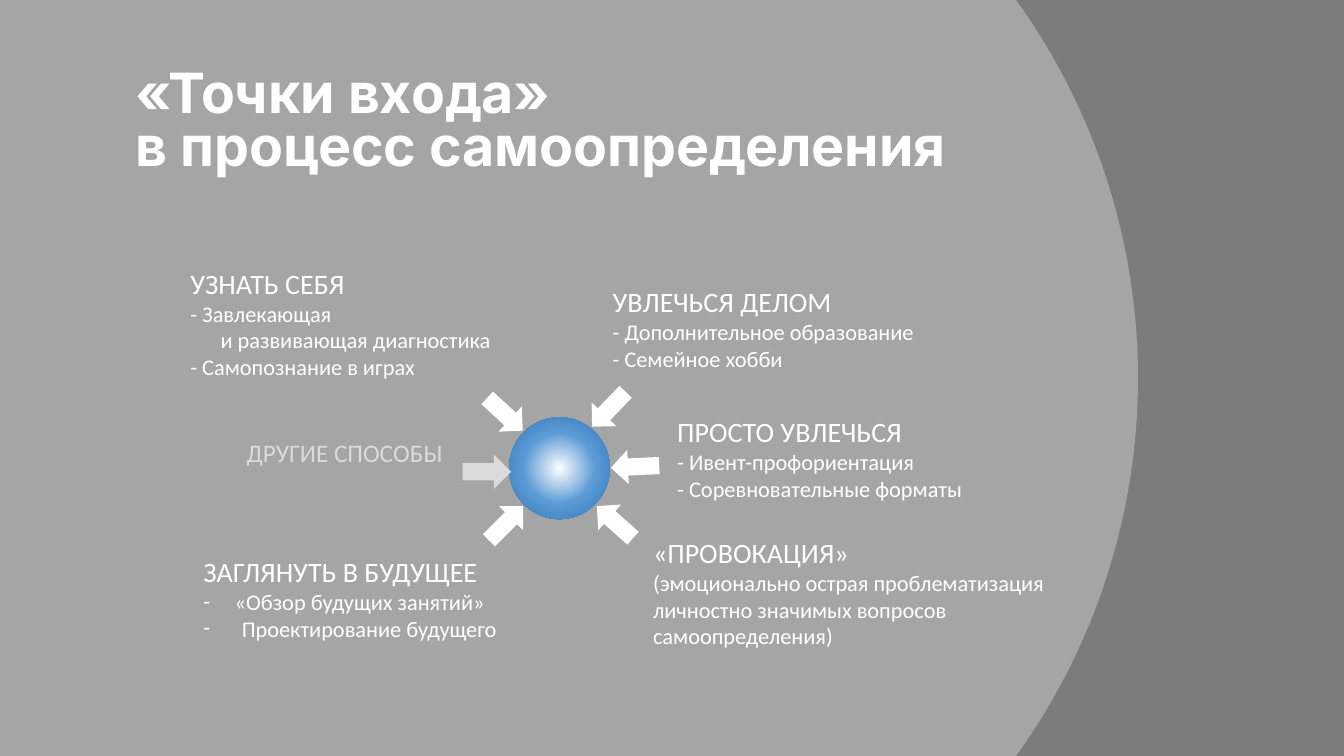
from dataclasses import dataclass
from math import sqrt
from typing import NamedTuple

from lxml.etree import SubElement as Sub
from pptx import Presentation as Deck
from pptx.dml.color import RGBColor as RGB
from pptx.enum.shapes import MSO_SHAPE as Kind
from pptx.enum.text import MSO_ANCHOR as Anchor, MSO_AUTO_SIZE as Fit, PP_ALIGN as Align
from pptx.oxml import parse_xml
from pptx.oxml.ns import nsdecls, qn
from pptx.util import Inches, Length, Pt

# The slide is a grid of square cells, ten to the inch
COLS, ROWS = 133.33, 75
WHITE, PALE = "FFFFFF", "DBDBDB"
BODY, HEAD = "Calibri", "Inter"
ARROW = (3.4, 4.8)
RIM, BULGE = 100.8, 12.1
STOPS = [(0, WHITE), (50, "5B9BD5"), (100, "2E75B6")]


class Line(NamedTuple):
    text: str
    inset: float = 0
    dash: bool = False


@dataclass
class Entry:
    title: str
    lines: list[Line]
    box: tuple[float, float, float, float]
    arrow: tuple[float, float]
    turn: float
    color: str = WHITE
    size: int = 20
    align: Align = Align.LEFT


ENTRIES = [
    Entry("УЗНАТЬ СЕБЯ",
          [Line("- Завлекающая"), Line("и развивающая диагностика", 3),
           Line("- Самопознание в играх")],
          (17.9, 25.9, 40, 12.5), (48.4, 38.7), 312.6),
    Entry("УВЛЕЧЬСЯ ДЕЛОМ",
          [Line("- Дополнительное образование"), Line("- Семейное хобби")],
          (59.8, 27.7, 38.9, 9.8), (58.7, 38.2), 43.8),
    Entry("ПРОСТО УВЛЕЧЬСЯ",
          [Line("- Ивент-профориентация"), Line("- Соревновательные форматы")],
          (66.2, 40.6, 37.5, 9.8), (61.3, 43.9), 87.4),
    Entry("«ПРОВОКАЦИЯ»",
          [Line("(эмоционально острая проблематизация личностно значимых "
                "вопросов самоопределения)")],
          (63.8, 52.6, 45.8, 12.5), (59.3, 49.4), 131.6),
    Entry("ЗАГЛЯНУТЬ В БУДУЩЕЕ",
          [Line("«Обзор будущих занятий»", 3.1, True),
           Line("Проектирование будущего", 3.8, True)],
          (19.2, 54.5, 37.2, 9.8), (48.5, 49.5), 225.1),
    Entry("ДРУГИЕ СПОСОБЫ", [], (20.7, 42.9, 24.2, 7.1), (46.6, 44.4), 270,
          PALE, 18, Align.RIGHT),
]


def cell(count: float) -> Length:
    return Inches(count / 10)


def cells(*counts: float) -> list[Length]:
    return [cell(count) for count in counts]


def paint(fill, color: str) -> None:
    fill.solid()
    fill.fore_color.rgb = RGB.from_string(color)


def style(para, size: float, color: str, font: str = BODY, bold: bool = False) -> None:
    for run in para.runs:
        run.font.size = Pt(size)
        run.font.name = font
        run.font.bold = bold
        run.font.color.rgb = RGB.from_string(color)


def indent(para, line: Line) -> None:
    """Set the left margin, and hang a dash in it where the line has one."""
    props = para._p.get_or_add_pPr()
    props.set("marL", str(cell(line.inset)))
    if line.dash:
        props.set("indent", str(-cell(line.inset)))
        Sub(props, qn("a:buFont"), typeface=BODY)
        Sub(props, qn("a:buChar"), char="-")


def add_panel(slide) -> None:
    """Draw the light field, whose right edge is an arc of one circle."""
    half = ROWS / 2
    radius = (BULGE ** 2 + half ** 2) / (2 * BULGE)
    hub = RIM + BULGE - radius
    arc = [(hub + sqrt(radius ** 2 - (row - half) ** 2), row) for row in range(ROWS + 1)]
    pen = slide.shapes.build_freeform(0, 0, scale=1.0)
    pen.add_line_segments([cells(*spot) for spot in arc + [(0, ROWS)]], close=True)
    panel = pen.convert_to_shape()
    paint(panel.fill, "A5A5A5")
    panel.line.fill.background()
    panel.shadow.inherit = False
    slide.shapes.title.element.addprevious(panel.element)


def add_title(slide) -> None:
    title = slide.shapes.title
    title.left, title.top, title.width, title.height = cells(12.4, 6.4, 97.2, 11.8)
    frame = title.text_frame
    frame.text = "«Точки входа»\vв процесс самоопределения"
    frame.auto_size = Fit.NONE
    frame.word_wrap = True
    frame.vertical_anchor = Anchor.MIDDLE
    para = frame.paragraphs[0]
    para.alignment = Align.LEFT
    para.line_spacing = 0.8
    para.space_before = Pt(0)
    style(para, 39.6, WHITE, HEAD, True)


def add_ball(slide) -> None:
    ball = slide.shapes.add_shape(Kind.OVAL, *cells(50.5, 41.4, 10, 10.1))
    stops = "".join(f'<a:gs pos="{share * 1000}"><a:srgbClr val="{color}"/></a:gs>'
                    for share, color in STOPS)
    ball.fill.gradient()
    props = ball.element.spPr
    props.replace(props.find(qn("a:gradFill")), parse_xml(
        f'<a:gradFill {nsdecls("a")} rotWithShape="1"><a:gsLst>{stops}</a:gsLst>'
        '<a:path path="circle"><a:fillToRect l="50000" t="50000" r="50000" b="50000"/>'
        '</a:path></a:gradFill>'))
    ball.line.fill.background()
    ball.shadow.inherit = False


def add_entry(slide, entry: Entry) -> None:
    frame = slide.shapes.add_textbox(*cells(*entry.box)).text_frame
    frame.word_wrap = True
    frame.text = entry.title
    head = frame.paragraphs[0]
    head.alignment = entry.align
    style(head, entry.size, entry.color)
    for line in entry.lines:
        para = frame.add_paragraph()
        para.text = line.text
        indent(para, line)
        style(para, 16, entry.color)

    arrow = slide.shapes.add_shape(Kind.DOWN_ARROW, *cells(*entry.arrow, *ARROW))
    arrow.rotation = entry.turn
    paint(arrow.fill, entry.color)
    arrow.line.fill.background()
    arrow.shadow.inherit = False


def main() -> None:
    deck = Deck()
    deck.slide_width, deck.slide_height = cells(COLS, ROWS)
    slide = deck.slides.add_slide(deck.slide_layouts.get_by_name("Title Only"))
    paint(slide.background.fill, "7C7C7C")
    add_panel(slide)
    add_title(slide)
    add_ball(slide)
    for entry in ENTRIES:
        add_entry(slide, entry)
    deck.save("out.pptx")


if __name__ == "__main__":
    main()
